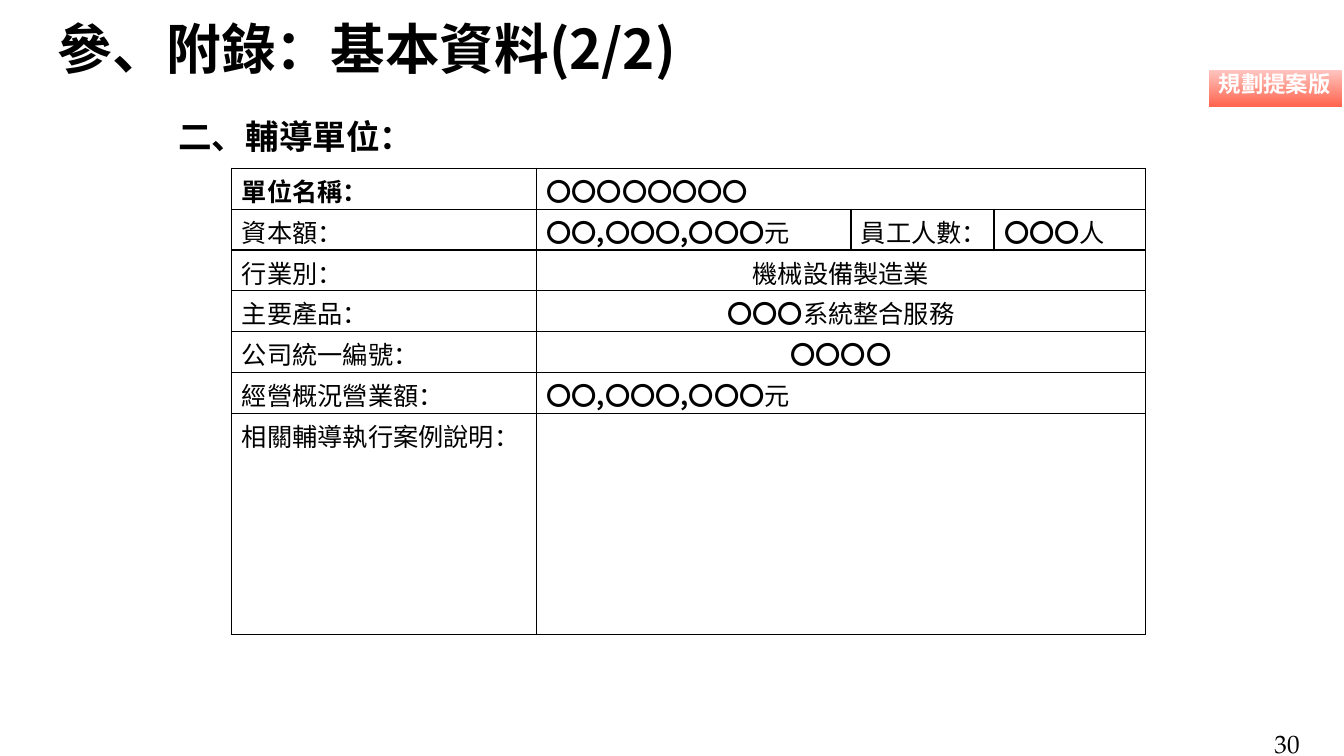
from lxml import etree
from pptx import Presentation
from pptx.dml.color import RGBColor
from pptx.enum.shapes import MSO_SHAPE
from pptx.enum.text import MSO_ANCHOR, PP_ALIGN
from pptx.oxml.ns import qn
from pptx.util import Inches, Pt

LEFT, CENTER, JUSTIFY = PP_ALIGN.LEFT, PP_ALIGN.CENTER, PP_ALIGN.JUSTIFY
TOP, BOTTOM = MSO_ANCHOR.TOP, MSO_ANCHOR.BOTTOM
RECTANGLE = MSO_SHAPE.RECTANGLE
TITLE_ONLY = 5

SANS, SERIF = "Noto Sans CJK SC", "TeX Gyre Pagella"
COLORS = {"text": "000000", "tag_text": "FFFFFF", "tag_bottom": "FF644E", "tag_top": "FFC6C2"}

TITLE = "參、附錄：基本資料(2/2)"
HEADING = "二、輔導單位："
TAG = "規劃提案版"
PAGE_NUMBER = "30"

# Each cell: alignment, then (text, bold) runs. A row of two cells spans the rest.
AMOUNT = (LEFT, ("〇〇,〇〇〇,〇〇〇", True), ("元", False))
ROWS = [
    [(LEFT, ("單位名稱：", True)), (LEFT, ("〇〇〇〇〇〇〇〇", True))],
    [(LEFT, ("資本額：", False)), AMOUNT, (LEFT, ("員工人數：", False)),
     (LEFT, ("〇〇〇", True), ("人", False))],
    [(LEFT, ("行業別：", False)), (CENTER, ("機械設備製造業", False))],
    [(LEFT, ("主要產品：", False)), (CENTER, ("〇〇〇", True), ("系統整合服務", False))],
    [(LEFT, ("公司統一編號：", False)), (CENTER, ("〇〇〇〇", True))],
    [(LEFT, ("經營概況營業額：", False)), AMOUNT],
    [(JUSTIFY, ("相關輔導執行案例說明：", False)), (LEFT,)],
]
COLUMN_WIDTHS = [3.02, 3.12, 1.42, 1.5]
TABLE_LEFT, TABLE_TOP, TABLE_HEIGHT, LAST_ROW_HEIGHT = 2.3, 1.67, 4.63, 2.2


def format_run(run, size, bold=False, font=SANS, color="text"):
    run.font.size = Pt(size)
    run.font.bold = bold
    run.font.name = font
    run.font.color.rgb = RGBColor.from_string(COLORS[color])
    east_asian = etree.Element(qn("a:ea"), typeface=font)
    run.font._element.find(qn("a:latin")).addnext(east_asian)


def fill_text(shape, text, size, margins, wrap=True, alignment=LEFT, anchor=TOP, **style):
    """Set one line of text; margins are (horizontal, vertical) in inches."""
    frame = shape.text_frame
    frame.text = text
    frame.word_wrap = wrap
    frame.vertical_anchor = anchor
    frame.margin_left = frame.margin_right = Inches(margins[0])
    frame.margin_top = frame.margin_bottom = Inches(margins[1])
    paragraph = frame.paragraphs[0]
    paragraph.alignment = alignment
    format_run(paragraph.runs[0], size, **style)


def add_borders(cell):
    properties = cell._tc.get_or_add_tcPr()
    for index, side in enumerate(("lnL", "lnR", "lnT", "lnB")):
        line = etree.Element(qn(f"a:{side}"), w=str(Pt(1)))
        fill = etree.SubElement(line, qn("a:solidFill"))
        etree.SubElement(fill, qn("a:srgbClr"), val=COLORS["text"])
        properties.insert(index, line)


def add_unit_table(slide):
    frame = slide.shapes.add_table(
        len(ROWS), len(COLUMN_WIDTHS), Inches(TABLE_LEFT), Inches(TABLE_TOP),
        Inches(sum(COLUMN_WIDTHS)), Inches(TABLE_HEIGHT))
    table = frame.table
    table.first_row = table.horz_banding = False
    for column, width in zip(table.columns, COLUMN_WIDTHS):
        column.width = Inches(width)
    row_height = (TABLE_HEIGHT - LAST_ROW_HEIGHT) / (len(ROWS) - 1)
    for row in table.rows:
        row.height = Inches(row_height)
    table.rows[len(ROWS) - 1].height = Inches(LAST_ROW_HEIGHT)

    for cell in table.iter_cells():
        cell.fill.background()
        cell.margin_left = cell.margin_right = Inches(0.1)
        cell.margin_top, cell.margin_bottom = Inches(0.04), 0
        add_borders(cell)
    for row_index, row in enumerate(ROWS):
        for column_index, (alignment, *runs) in enumerate(row):
            paragraph = table.cell(row_index, column_index).text_frame.paragraphs[0]
            paragraph.alignment = alignment
            for text, bold in runs:
                run = paragraph.add_run()
                run.text = text
                format_run(run, 18, bold)
        if len(row) == 2:
            table.cell(row_index, 1).merge(table.cell(row_index, len(COLUMN_WIDTHS) - 1))


def main():
    presentation = Presentation()
    presentation.slide_width, presentation.slide_height = Inches(13.33), Inches(7.5)
    slide = presentation.slides.add_slide(presentation.slide_layouts[TITLE_ONLY])
    shapes = slide.shapes

    title = shapes.title
    title.left, title.top = Inches(0.37), Inches(0.05)
    title.width, title.height = Inches(12.76), Inches(0.8)
    fill_text(title, TITLE, 39, (0.2, 0.05), anchor=BOTTOM, bold=True)

    tag = shapes.add_shape(RECTANGLE, Inches(11.99), Inches(0.69), Inches(1.32), Inches(0.37))
    tag.shadow.inherit = False
    tag.line.fill.background()
    tag.fill.gradient()
    tag.fill.gradient_angle = 90
    for stop, name in zip(tag.fill.gradient_stops, ("tag_bottom", "tag_top")):
        stop.color.rgb = RGBColor.from_string(COLORS[name])
    fill_text(tag, TAG, 16, (0.1, 0.01), wrap=False, bold=True, color="tag_text")

    heading = shapes.add_textbox(Inches(1.67), Inches(1.15), Inches(9.96), Inches(0.5))
    fill_text(heading, HEADING, 24, (0.1, 0), bold=True)

    add_unit_table(slide)

    number = shapes.add_textbox(Inches(12.19), Inches(7.17), Inches(1.15), Inches(0.27))
    fill_text(number, PAGE_NUMBER, 18, (0.06, 0.06), wrap=False, alignment=CENTER, font=SERIF)

    presentation.save("out.pptx")


if __name__ == "__main__":
    main()
